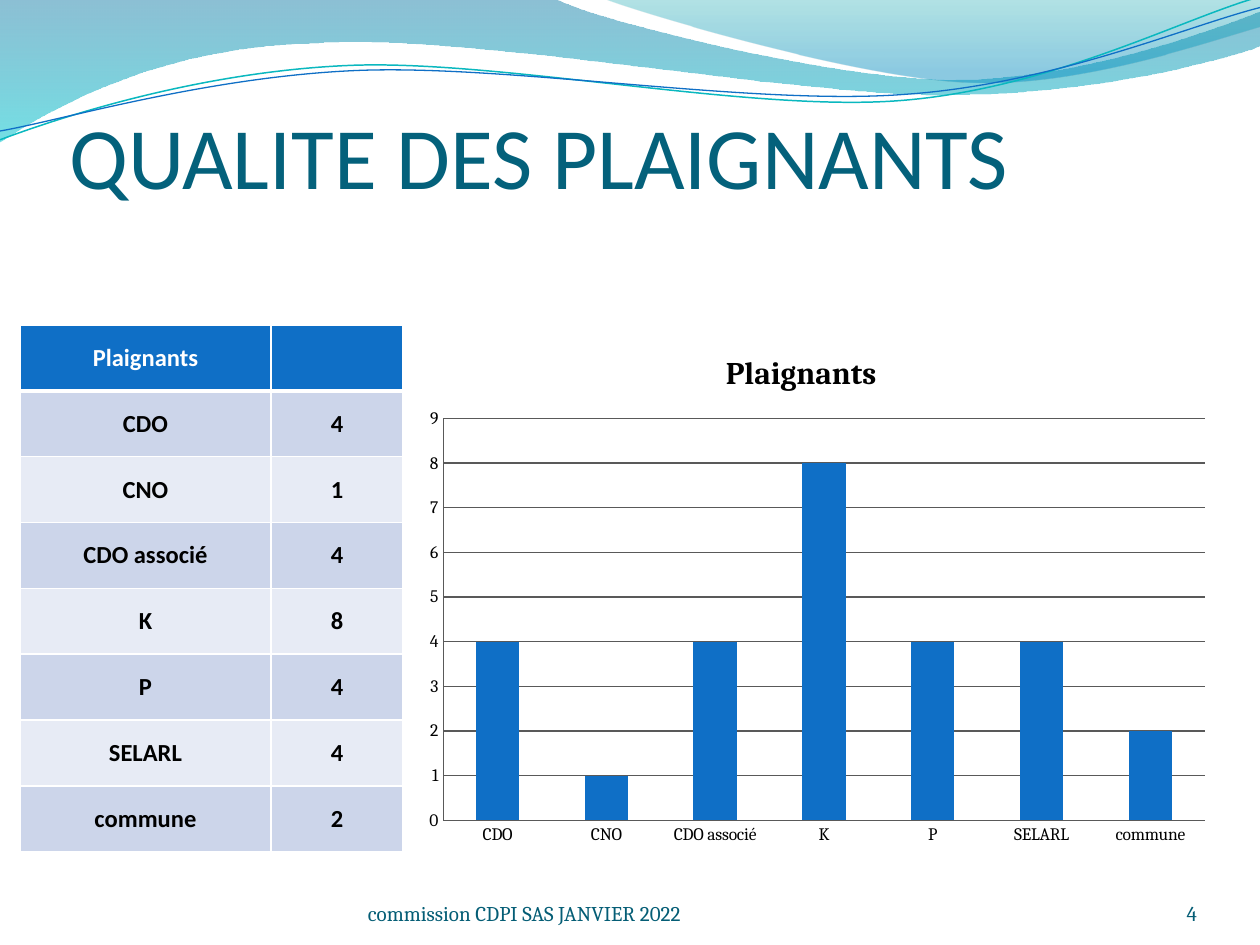
"""Build the slide on the status of complainants: waves, table and column chart."""
from dataclasses import dataclass
from typing import Optional

import pptx
import pptx.chart.data
import pptx.dml.color
import pptx.enum.chart
import pptx.enum.text
import pptx.oxml
import pptx.oxml.ns
import pptx.util

Inches = pptx.util.Inches
Pt = pptx.util.Pt
ALIGN = pptx.enum.text.PP_ALIGN
ANCHOR = pptx.enum.text.MSO_ANCHOR
qn = pptx.oxml.ns.qn
BLUE, WHITE, BLACK, GRID = "0F6FC6", "FFFFFF", "000000", "595959"
ROWS = [("CDO", 4), ("CNO", 1), ("CDO associé", 4), ("K", 8), ("P", 4), ("SELARL", 4), ("commune", 2)]


@dataclass
class Stop:
    position: float
    color: str
    alpha: int


@dataclass
class Wave:
    points: list
    stops: tuple = ()
    color: Optional[str] = None
    width: float = 0


@dataclass
class Label:
    text: str
    box: tuple
    size: int
    font: str
    color: str
    align: ALIGN = ALIGN.LEFT
    top_inset: float = 0


WAVES = [
    Wave([(0, 0), (4.4, -0.01), (4.76, 0.17, 6.64, 0.63, 7.58, 0.63), (8.53, 0.63, 9.58, 0.26, 10, 0.09),
          (10.01, 0.36), (9.83, 0.44, 8.7, 0.76, 7.46, 0.75), (6.22, 0.75, 3.82, 0.28, 2.57, 0.34),
          (1.29, 0.36, 0.46, 0.83, -0.01, 1.13), (0, 0)],
         stops=(Stop(0, "0074A1", 45), Stop(1, "00C6CF", 55))),
    Wave([(4.79, -0.01), (5.09, 0.11, 6.82, 0.62, 7.69, 0.65), (8.56, 0.69, 9.61, 0.32, 10, 0.21),
          (10, 0), (4.79, -0.01)],
         stops=(Stop(0, "00A1A9", 30), Stop(0.8, "008BBF", 45))),
    Wave([(0, 1.11), (0.48, 0.93, 1.58, 0.57, 2.77, 0.52), (3.95, 0.47, 5.93, 0.89, 7.13, 0.8),
          (8.33, 0.71, 9.38, 0.15, 9.98, -0.02)], color="0AB8BF", width=0.85),
    Wave([(0, 1.04), (0.47, 0.96, 1.64, 0.61, 2.83, 0.56), (4.03, 0.51, 5.97, 0.84, 7.17, 0.75),
          (8.36, 0.67, 9.41, 0.21, 10, 0.06)], color=BLUE, width=0.75),
]
LABELS = [
    Label("QUALITE DES PLAIGNANTS", (0.55, 0.39, 9, 1.25), 50, "Calibri", "04617B", top_inset=0.05),
    Label("commission CDPI SAS JANVIER 2022", (2.92, 6.95, 3.67, 0.4), 12, "Cambria", "045D75"),
    Label("4", (8.67, 6.95, 0.83, 0.4), 12, "Cambria", "045D75", ALIGN.RIGHT),
]


def rgb(value: str) -> pptx.dml.color.RGBColor:
    """Turn a hex string into a colour."""
    return pptx.dml.color.RGBColor.from_string(value)


def apply(target, values: dict) -> None:
    """Set each attribute of the target from the dict."""
    for name, value in values.items():
        setattr(target, name, value)


def style_font(font, name: str, size: float, color: str, bold: bool = False) -> None:
    """Set typeface, size, weight and colour."""
    apply(font, {"name": name, "size": Pt(size), "bold": bold})
    font.color.rgb = rgb(color)


def build_curve(slide, points: list, closed: bool):
    """Build a freeform whose six-number points are cubic curves."""
    start, *rest = [(Inches(p[i]), Inches(p[i + 1])) for p in points for i in range(0, len(p), 2)]
    builder = slide.shapes.build_freeform(*start)
    builder.add_line_segments(rest, close=closed)
    sp = builder.convert_to_shape()
    lines = iter(sp._element.findall(".//" + qn("a:lnTo")))
    for point in points[1:]:
        first = next(lines)
        if len(point) == 6:
            curve = pptx.oxml.parse_xml(f'<a:cubicBezTo {pptx.oxml.ns.nsdecls("a")}/>')
            first.addprevious(curve)
            for line in (first, next(lines), next(lines)):
                curve.append(line[0])
                line.getparent().remove(line)
    return sp


def draw_wave(slide, wave: Wave) -> None:
    """Draw a gradient band or a thin curve."""
    sp = build_curve(slide, wave.points, bool(wave.stops))
    sp.shadow.inherit = False
    if not wave.stops:
        sp.fill.background()
        sp.line.color.rgb = rgb(wave.color)
        sp.line.width = Pt(wave.width)
        return
    sp.line.fill.background()
    sp.fill.gradient()
    sp.fill.gradient_angle = 270
    for gs, stop in zip(sp.fill.gradient_stops, wave.stops):
        gs.position = stop.position
        gs.color.rgb = rgb(stop.color)
    colors = sp._element.spPr.findall(".//" + qn("a:srgbClr"))
    for color, stop in zip(colors, wave.stops):
        alpha = f'<a:alpha {pptx.oxml.ns.nsdecls("a")} val="{stop.alpha * 1000}"/>'
        color.append(pptx.oxml.parse_xml(alpha))


def draw_label(slide, label: Label) -> None:
    """Add a bottom-anchored line of text."""
    tf = slide.shapes.add_textbox(*map(Inches, label.box)).text_frame
    apply(tf, {"word_wrap": True, "vertical_anchor": ANCHOR.BOTTOM, "margin_left": 0, "margin_right": 0,
               "margin_top": Inches(label.top_inset), "margin_bottom": 0})
    p = tf.paragraphs[0]
    p.alignment = label.align
    r = p.add_run()
    r.text = label.text
    style_font(r.font, label.font, label.size, label.color)


def draw_borders(cell, widths: dict) -> None:
    """Give the cell white borders, widths in points by side."""
    for side, width in widths.items():
        cell._tc.get_or_add_tcPr().append(pptx.oxml.parse_xml(
            f'<a:ln{side} {pptx.oxml.ns.nsdecls("a")} w="{Pt(width)}"><a:solidFill>'
            f'<a:srgbClr val="{WHITE}"/></a:solidFill></a:ln{side}>'))


def draw_table(slide) -> None:
    """Add the banded table of complainants."""
    data = [("Plaignants", "")] + ROWS
    table = slide.shapes.add_table(len(data), 2, *map(Inches, (0.16, 2.58, 3.05, 4.18))).table
    for column, width in zip(table.columns, (1.99, 1.05)):
        column.width = Inches(width)
    for i, row in enumerate(data):
        fill = BLUE if i == 0 else ("E7EBF5", "CCD5EA")[i % 2]
        for j, value in enumerate(row):
            cell = table.cell(i, j)
            apply(cell, {"vertical_anchor": ANCHOR.MIDDLE, "margin_left": 0, "margin_right": 0,
                         "margin_top": 0, "margin_bottom": 0})
            draw_borders(cell, {"L": 1, "R": 1, "T": 3 if i == 1 else 1, "B": 3 if i == 0 else 1})
            cell.fill.solid()
            cell.fill.fore_color.rgb = rgb(fill)
            p = cell.text_frame.paragraphs[0]
            p.alignment = ALIGN.CENTER
            if value:
                r = p.add_run()
                r.text = str(value)
                style_font(r.font, "Calibri", 14, BLACK if i else WHITE, True)


def draw_chart(slide) -> None:
    """Add the column chart of complainants."""
    data = pptx.chart.data.CategoryChartData()
    data.categories = [name for name, _ in ROWS]
    data.add_series("Series 1", [count for _, count in ROWS])
    kind = pptx.enum.chart.XL_CHART_TYPE.COLUMN_CLUSTERED
    chart = slide.shapes.add_chart(kind, *map(Inches, (3.28, 2.58, 6.41, 4.21)), data).chart
    chart.has_legend = False
    style_font(chart.font, "Cambria", 10, BLACK)
    tf = chart.chart_title.text_frame
    tf.text = "Plaignants"
    style_font(tf.paragraphs[0].runs[0].font, "Cambria", 18, BLACK, True)
    title = chart.chart_title._element
    for layout in title.findall(qn("c:layout")):
        title.remove(layout)
    title.find(qn("c:tx")).addnext(pptx.oxml.parse_xml(
        f'<c:layout {pptx.oxml.ns.nsdecls("c")}><c:manualLayout><c:xMode val="edge"/><c:yMode val="edge"/>'
        '<c:x val="0.38"/><c:y val="0.04"/></c:manualLayout></c:layout>'))
    tick = pptx.enum.chart.XL_TICK_MARK.NONE
    for axis in (chart.category_axis, chart.value_axis):
        apply(axis, {"major_tick_mark": tick, "minor_tick_mark": tick})
        axis.format.line.color.rgb = rgb(GRID)
    axis = chart.value_axis
    apply(axis, {"minimum_scale": 0, "maximum_scale": 9, "major_unit": 1, "has_major_gridlines": True})
    axis.major_gridlines.format.line.color.rgb = rgb(GRID)
    plot = chart.plots[0]
    apply(plot, {"gap_width": 150, "vary_by_categories": False})
    fill = plot.series[0].format.fill
    fill.solid()
    fill.fore_color.rgb = rgb(BLUE)


prs = pptx.Presentation()
apply(prs, {"slide_width": Inches(10), "slide_height": Inches(7.5)})
s = prs.slides.add_slide(prs.slide_layouts[6])
for draw, items in ((draw_wave, WAVES), (draw_label, LABELS)):
    for item in items:
        draw(s, item)
draw_table(s)
draw_chart(s)
prs.save("out.pptx")
